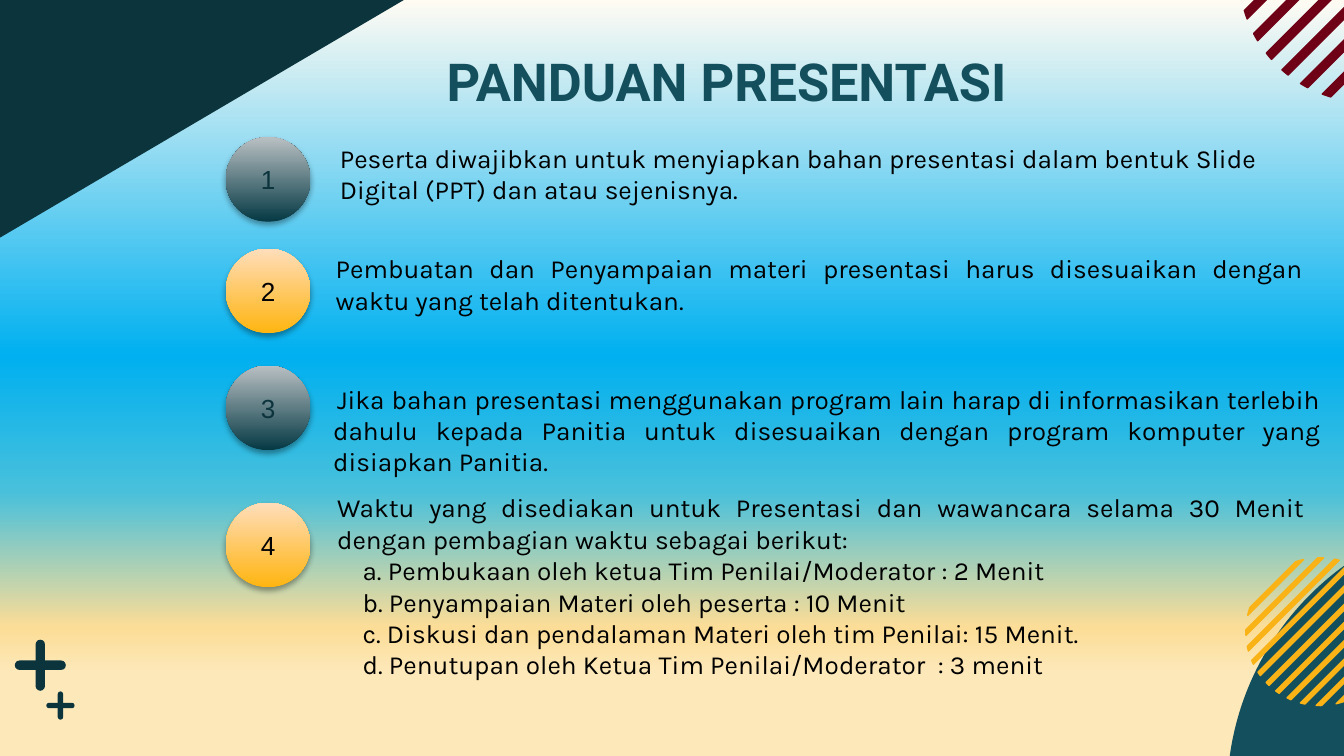
from math import sqrt

from lxml.etree import SubElement
from pptx import Presentation
from pptx.dml.color import RGBColor
from pptx.enum.shapes import MSO_SHAPE as SHAPE
from pptx.enum.text import MSO_ANCHOR as ANCHOR, PP_ALIGN as ALIGN
from pptx.oxml.ns import qn
from pptx.util import Inches, Pt

DARK, TEAL, YELLOW, MAROON, BLACK = "0C343D", "134F5C", "F9B317", "6F0116", "000000"
BACKGROUND = [(0, "FFFBF3"), (47, "00B0F0"), (65, "48C0DB"), (83, "FCDD97"), (89, "FDE8B9")]
BADGES = [  # gradient stops, number colour
    ([(0, "053944"), (100, "B9C0C3")], DARK),
    ([(0, "FFB511"), (100, "FFDDBA")], BLACK),
]
BADGE_LEFT, BADGE_SIZE = 1.68, 0.63

TITLE = "PANDUAN PRESENTASI"
ITEMS = [  # badge top, text box (left, top, width, height), alignment, first-line indent, text
    (1.02, (2.43, 1.01, 7.38, 0.57), ALIGN.LEFT, 0,
     "Peserta diwajibkan untuk menyiapkan bahan presentasi dalam bentuk Slide Digital (PPT) "
     "dan atau sejenisnya."),
    (1.85, (2.4, 1.83, 7.4, 0.57), ALIGN.JUSTIFY, 0,
     "Pembuatan dan Penyampaian materi presentasi harus disesuaikan dengan waktu yang telah "
     "ditentukan."),
    (2.72, (2.38, 2.8, 7.55, 0.8), ALIGN.JUSTIFY, 0.03,
     "Jika bahan presentasi menggunakan program lain harap di informasikan terlebih dahulu "
     "kepada Panitia untuk disesuaikan dengan program komputer yang disiapkan Panitia."),
    (3.74, (2.41, 3.61, 7.4, 1.51), ALIGN.JUSTIFY, 0,
     "Waktu yang disediakan untuk Presentasi dan wawancara selama 30 Menit dengan pembagian "
     "waktu sebagai berikut:"),
]
SCHEDULE = [
    " Pembukaan oleh ketua Tim Penilai/Moderator : 2 Menit",
    " Penyampaian Materi oleh peserta : 10 Menit",
    " Diskusi dan pendalaman Materi oleh tim Penilai: 15 Menit.",
    " Penutupan oleh Ketua Tim Penilai/Moderator  : 3 menit",
]
# centre x, centre y, radius, stripe count, span between outer stripes, width, colour
STRIPED_DISCS = [
    (9.82, 4.7, 0.55, 11, 0.96, 0.03, YELLOW),
    (10.17, -0.19, 0.95, 6, 0.85, 0.06, MAROON),
]
PLUSES = [(0.3, 4.95, 0.38, 0.07), (0.45, 5.25, 0.21, 0.04)]  # centre, length, thickness


def rgb(color):
    return RGBColor.from_string(color)


def box(*lengths):
    return [Inches(n) for n in lengths]


def set_gradient(fill, owner, stops, angle):
    """Give fill, which lies inside the XML element owner, a linear gradient."""
    fill.gradient()
    grad = next(owner.iter(qn("a:gradFill")))
    stop_list = grad.find(qn("a:gsLst"))
    for old in list(stop_list):
        stop_list.remove(old)
    for position, color in stops:
        gs = SubElement(stop_list, qn("a:gs"), pos=str(position * 1000))
        SubElement(gs, qn("a:srgbClr"), val=color)
    grad.find(qn("a:lin")).set("ang", str(angle * 60000))


def add_shape(kind, bounds, color=None):
    sp = slide.shapes.add_shape(kind, *box(*bounds))
    if color:
        sp.fill.solid()
        sp.fill.fore_color.rgb = rgb(color)
    sp.line.fill.background()
    sp.shadow.inherit = False
    return sp


def add_run(p, text, size, font, color, bold=False):
    r = p.add_run()
    r.text = text
    r.font.size, r.font.name, r.font.bold = Pt(size), font, bold
    r.font.color.rgb = rgb(color)


def add_text_box(bounds):
    tf = slide.shapes.add_textbox(*box(*bounds)).text_frame
    tf.word_wrap = True
    return tf


def set_indent(p, indent, numbered=False):
    pPr = p._p.get_or_add_pPr()
    pPr.set("marL", "0")
    pPr.set("indent", str(Inches(indent)))
    if numbered:
        SubElement(pPr, qn("a:buFont"), typeface="Karla")
        SubElement(pPr, qn("a:buAutoNum"), type="alphaLcPeriod")


def add_stripe(cx, cy, radius, offset, width, color):
    """Draw a rising diagonal band, cut off by the circle at both ends."""
    low = max(offset - width / 2, -radius)
    offsets = [low + (offset + width / 2 - low) * i / 4 for i in range(5)]
    edges = [(d, sqrt(max(radius**2 - d**2, 0))) for d in offsets]
    ends = [(d, -h) for d, h in edges] + [(d, h) for d, h in reversed(edges)]
    points = [(Inches(cx + (d + h) / sqrt(2)), Inches(cy + (d - h) / sqrt(2))) for d, h in ends]
    builder = slide.shapes.build_freeform(*points[0])
    builder.add_line_segments(points[1:])
    sp = builder.convert_to_shape()
    sp.fill.solid()
    sp.fill.fore_color.rgb = sp.line.color.rgb = rgb(color)
    sp.line.width = Pt(0.75)
    sp.shadow.inherit = False


def add_badge(number, top):
    stops, color = BADGES[(number - 1) % 2]
    sp = add_shape(SHAPE.OVAL, (BADGE_LEFT, top, BADGE_SIZE, BADGE_SIZE))
    spPr = sp._element.spPr
    set_gradient(sp.fill, spPr, stops, 270)
    shadow = SubElement(spPr.find(qn("a:effectLst")), qn("a:outerShdw"), blurRad=str(Pt(3.1)),
                        dist=str(Pt(1.8)), dir="5400000", rotWithShape="0")
    SubElement(SubElement(shadow, qn("a:srgbClr"), val=BLACK), qn("a:alpha"), val="35000")
    tf = sp.text_frame
    tf.vertical_anchor = ANCHOR.MIDDLE
    p = tf.paragraphs[0]
    p.alignment = ALIGN.CENTER
    add_run(p, str(number), 14, "Arial", color)


prs = Presentation()
prs.slide_width = Inches(10)
prs.slide_height = prs.slide_width * 9 // 16
slide = prs.slides.add_slide(prs.slide_layouts[6])
set_gradient(slide.background.fill, slide.element, BACKGROUND, 90)

corner = add_shape(SHAPE.RIGHT_TRIANGLE, (-0.63, -0.22, 4.01, 2.36), DARK)
corner._element.spPr.find(qn("a:xfrm")).set("flipV", "1")
add_shape(SHAPE.OVAL, (9.13, 3.81, 4.21, 4.21), TEAL)
for cx, cy, radius, count, span, width, color in STRIPED_DISCS:
    for i in range(count):
        add_stripe(cx, cy, radius, span * (i / (count - 1) - 0.5), width, color)
for cx, cy, length, thickness in PLUSES:
    for w, h in ((thickness, length), (length, thickness)):
        bar = add_shape(SHAPE.ROUNDED_RECTANGLE, (cx - w / 2, cy - h / 2, w, h), DARK)
        bar.adjustments[0] = 0.5

tf = add_text_box((1.19, 0.32, 8.43, 0.58))
tf.paragraphs[0].alignment = ALIGN.CENTER
add_run(tf.paragraphs[0], TITLE, 28, "Roboto", TEAL, bold=True)

for number, (badge_top, bounds, alignment, indent, text) in enumerate(ITEMS, 1):
    add_badge(number, badge_top)
    tf = add_text_box(bounds)
    p = tf.paragraphs[0]
    p.alignment = alignment
    set_indent(p, indent)
    add_run(p, text, 14, "Karla", BLACK)

for text in SCHEDULE:  # continues the last item
    p = tf.add_paragraph()
    p.alignment = ALIGN.JUSTIFY
    set_indent(p, 0.19, numbered=True)
    add_run(p, text, 14, "Karla", BLACK)

prs.save("out.pptx")
